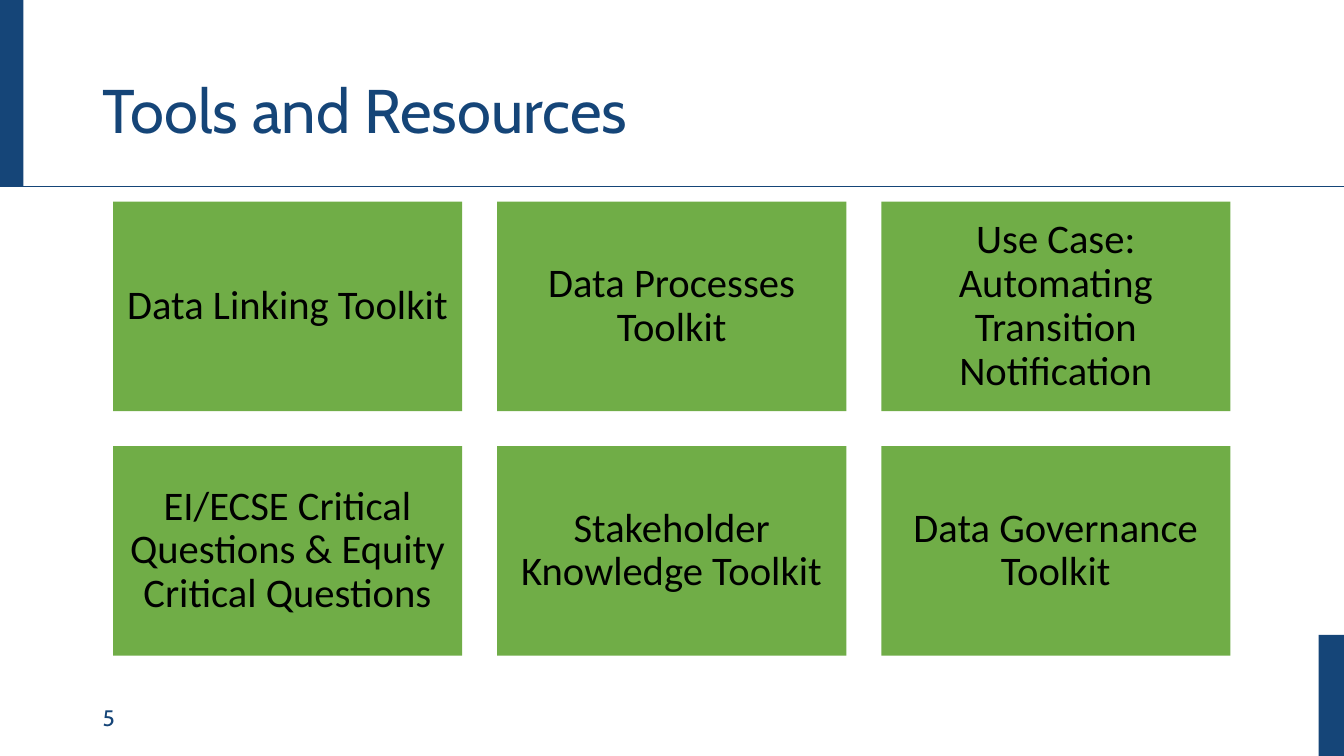
from dataclasses import dataclass

from lxml.etree import SubElement
from pptx import Presentation
from pptx.dml.color import RGBColor
from pptx.enum.shapes import MSO_CONNECTOR as Link, MSO_SHAPE as Shape
from pptx.enum.text import MSO_ANCHOR as Anchor, PP_ALIGN as Align
from pptx.oxml.ns import qn
from pptx.util import Cm, Pt

NAVY, GREEN, BLACK = "154578", "70AD47", "000000"
WIDTH, HEIGHT = 33.87, 19.05
RULE = 4.7
COLS, LEFT, TOP = 3, 2.85, 5.08
CARD_W, CARD_H, GAP = 8.8, 5.28, 0.88
TOOLS = [
    "Data Linking Toolkit",
    "Data Processes Toolkit",
    "Use Case: Automating Transition Notification",
    "EI/ECSE Critical Questions & Equity Critical Questions",
    "Stakeholder Knowledge Toolkit",
    "Data Governance Toolkit",
]


@dataclass
class Box:
    x: float
    y: float
    w: float
    h: float

    def place(self) -> tuple:
        return Cm(self.x), Cm(self.y), Cm(self.w), Cm(self.h)


@dataclass
class Style:
    font: str
    size: float
    color: str
    align: Align = Align.LEFT
    inset: float = 0.25
    spacing: float = 1.0


TITLE = Style("Cabin", 44, NAVY, spacing=0.9)
NUMBER = Style("Cabin", 16, NAVY)
CARD = Style("Calibri", 29, BLACK, Align.CENTER, 0.29, 0.9)


def rgb(code: str) -> RGBColor:
    return RGBColor.from_string(code)


def write(shape, text: str, style: Style) -> None:
    frame = shape.text_frame
    frame.word_wrap = True
    frame.vertical_anchor = Anchor.MIDDLE
    frame.margin_left = frame.margin_right = Cm(style.inset)
    frame.margin_top = frame.margin_bottom = Cm(style.inset / 2)
    para = frame.paragraphs[0]
    para.text = text
    para.alignment = style.align
    para.line_spacing = style.spacing
    para.font.name = style.font
    para.font.size = Pt(style.size)
    para.font.color.rgb = rgb(style.color)


def add_block(slide, box: Box, color: str):
    block = slide.shapes.add_shape(Shape.RECTANGLE, *box.place())
    block.shadow.inherit = False
    block.fill.solid()
    block.fill.fore_color.rgb = rgb(color)
    block.line.fill.background()
    return block


def add_label(slide, box: Box, text: str, style: Style) -> None:
    write(slide.shapes.add_textbox(*box.place()), text, style)


def add_rule(slide, y: float) -> None:
    rule = slide.shapes.add_connector(
        Link.STRAIGHT, Cm(0), Cm(y), Cm(WIDTH), Cm(y))
    rule.line.color.rgb = rgb(NAVY)
    rule.line.width = Pt(0.5)
    SubElement(rule._element.spPr, qn("a:effectLst"))


def main() -> None:
    deck = Presentation()
    deck.slide_width, deck.slide_height = Cm(WIDTH), Cm(HEIGHT)
    slide = deck.slides.add_slide(deck.slide_layouts[6])

    add_label(slide, Box(2.34, 17.58, 7.62, 1.02), "5", NUMBER)
    for bar in (Box(0, 0, 0.59, RULE), Box(33.23, 16, 0.64, 3.05)):
        add_block(slide, bar, NAVY)
    add_rule(slide, RULE)
    add_label(slide, Box(2.34, 1.02, 29.21, 3.68), "Tools and Resources", TITLE)

    for i, tool in enumerate(TOOLS):
        row, col = divmod(i, COLS)
        box = Box(LEFT + col * (CARD_W + GAP), TOP + row * (CARD_H + GAP),
                  CARD_W, CARD_H)
        write(add_block(slide, box, GREEN), tool, CARD)

    deck.save("out.pptx")


if __name__ == "__main__":
    main()
